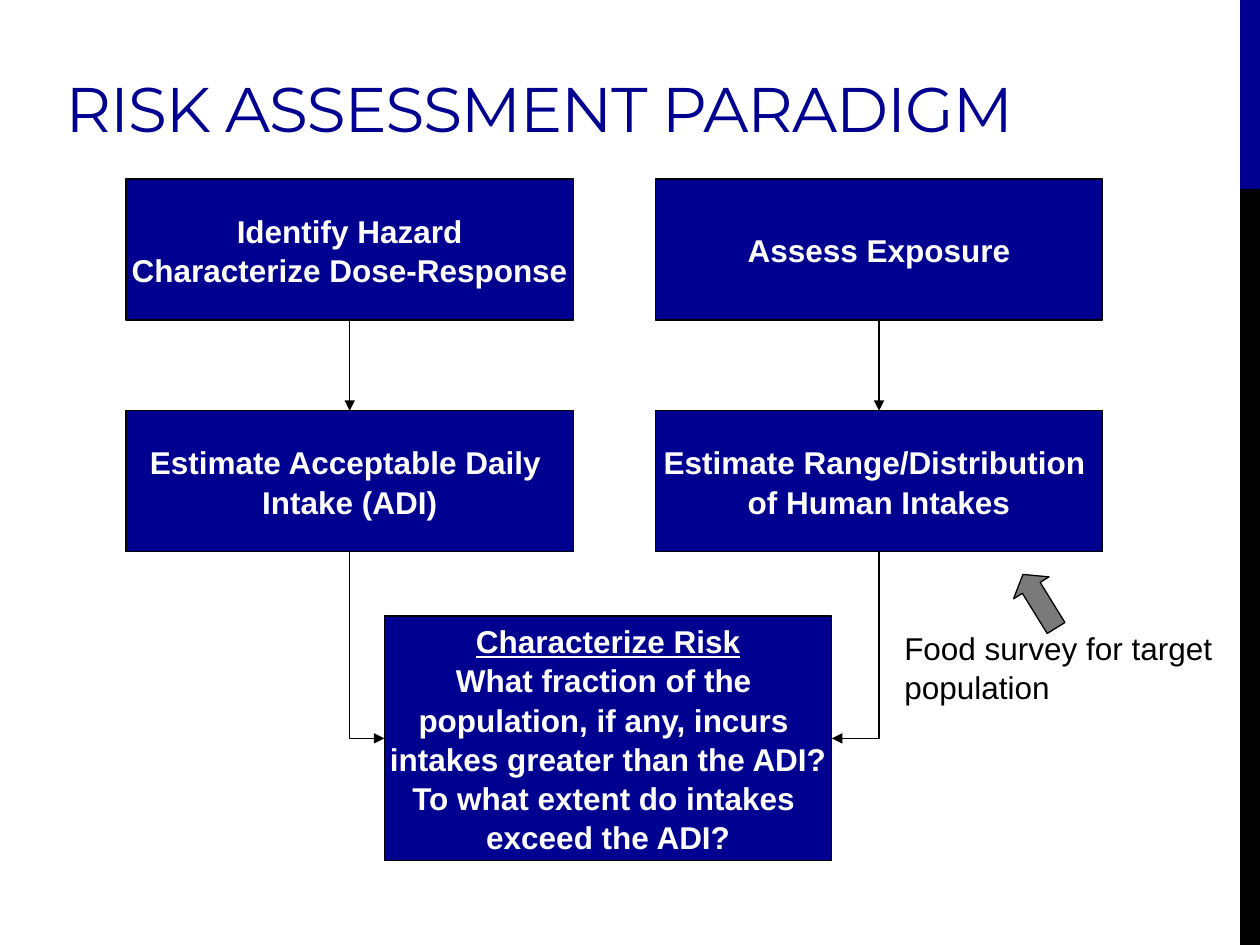
from lxml import etree
from pptx import Presentation
from pptx import util as u
from pptx.dml.color import RGBColor
from pptx.enum import shapes, text
from pptx.oxml.ns import qn

Cm, Pt = u.Cm, u.Pt
COLORS = {k: RGBColor.from_string(v) for k, v in {
    "navy": "000090", "black": "000000", "white": "FFFFFF", "gray": "7A7A7A"}.items()}

prs = Presentation()
prs.slide_width, prs.slide_height = Cm(25.4), Cm(19.05)
s = prs.slides.add_slide(prs.slide_layouts[5])


def add_shape(kind, x, y, w, h, fill, outlined=True):
    sp = s.shapes.add_shape(kind, Cm(x), Cm(y), Cm(w), Cm(h))
    sp.shadow.inherit = False
    sp.fill.solid()
    sp.fill.fore_color.rgb = COLORS[fill]
    if outlined:
        sp.line.color.rgb = COLORS["black"]
        sp.line.width = Pt(0.75)
    else:
        sp.line.fill.background()
    return sp


def add_arrow(kind, x1, y1, x2, y2):
    c = s.shapes.add_connector(kind, Cm(x1), Cm(y1), Cm(x2), Cm(y2))
    c.line.color.rgb = COLORS["black"]
    c.line.width = Pt(0.75)
    etree.SubElement(c.line._get_or_add_ln(), qn("a:tailEnd"), type="triangle")
    etree.SubElement(c._element.spPr, qn("a:effectLst"))
    return c


# Side bar
RECT = shapes.MSO_SHAPE.RECTANGLE
add_shape(RECT, 25, 0, 0.4, 3.81, "navy", outlined=False)
add_shape(RECT, 25, 3.81, 0.4, 15.24, "black", outlined=False)

# Title
title = s.shapes.title
title.left, title.top, title.width, title.height = Cm(1.07), Cm(0.64), Cm(23.29), Cm(2.41)
tf = title.text_frame
tf.text = "RISK ASSESSMENT PARADIGM"
tf.vertical_anchor = text.MSO_ANCHOR.BOTTOM
p = tf.paragraphs[0]
p.alignment = text.PP_ALIGN.LEFT
r = p.runs[0]
r.font.name, r.font.size = "Montserrat", Pt(36)
r.font.color.rgb = COLORS["navy"]
r._r.get_or_add_rPr().set("spc", "-60")

# Layout of the flow chart
BOX_W, BOX_H, RISK_H = 9.02, 2.84, 4.93
LEFT, RIGHT = 2.54, 13.21
ROW1, ROW2 = 3.61, 8.28
RISK_X, RISK_Y = 7.75, 12.42
risk_mid = RISK_Y + RISK_H / 2

# Arrows: straight between the rows, then bent into the risk box
for x, risk_edge in ((LEFT, RISK_X), (RIGHT, RISK_X + BOX_W)):
    mid, bottom = x + BOX_W / 2, ROW2 + BOX_H
    add_arrow(shapes.MSO_CONNECTOR.STRAIGHT, mid, ROW1 + BOX_H, mid, ROW2)
    # The bend is a right-then-down elbow turned by a quarter
    length, depth = risk_mid - bottom, abs(risk_edge - mid)
    cx, cy = (mid + risk_edge) / 2, (bottom + risk_mid) / 2
    side = 1 if risk_edge < mid else -1
    c = add_arrow(shapes.MSO_CONNECTOR.ELBOW, cx - side * length / 2, cy - depth / 2,
                  cx + side * length / 2, cy + depth / 2)
    c._element.spPr.find(qn("a:prstGeom")).set("prst", "bentConnector2")
    c._element.spPr.find(qn("a:xfrm")).set("rot", str((90 if side > 0 else 270) * 60000))

# Boxes
boxes = [
    (LEFT, ROW1, BOX_H, "Identify Hazard\nCharacterize Dose-Response"),
    (RIGHT, ROW1, BOX_H, "Assess Exposure"),
    (LEFT, ROW2, BOX_H, "Estimate Acceptable Daily \vIntake (ADI)"),
    (RIGHT, ROW2, BOX_H, "Estimate Range/Distribution \nof Human Intakes"),
    (RISK_X, RISK_Y, RISK_H,
     "Characterize Risk\nWhat fraction of the \npopulation, if any, incurs \n"
     "intakes greater than the ADI?\nTo what extent do intakes \nexceed the ADI?"),
]
for x, y, h, words in boxes:
    sp = add_shape(RECT, x, y, BOX_W, h, "navy")
    tf = sp.text_frame
    tf.text = words
    tf.word_wrap = False
    tf.vertical_anchor = text.MSO_ANCHOR.MIDDLE
    for p in tf.paragraphs:
        p.alignment = text.PP_ALIGN.CENTER
        p.line_spacing = 1.04
        for r in p.runs:
            r.font.name, r.font.size, r.font.bold = "Arial", Pt(18), True
            r.font.color.rgb = COLORS["white"]
            r.font.underline = r.text == "Characterize Risk"

# Survey note with its block arrow
sp = s.shapes.add_textbox(Cm(17.98), Cm(12.52), Cm(7.19), Cm(2.31))
tf = sp.text_frame
tf.text = "Food survey for target population"
tf.word_wrap = True
p = tf.paragraphs[0]
p.line_spacing = 1.04
r = p.runs[0]
r.font.name, r.font.size = "Arial", Pt(18)
r.font.color.rgb = COLORS["black"]

sp = add_shape(shapes.MSO_SHAPE.LEFT_ARROW, 20.32, 11.7, 1.27, 0.84, "gray")
sp.adjustments[0], sp.adjustments[1] = 0.5, 0.38
sp.rotation = 58.3

prs.save("out.pptx")
